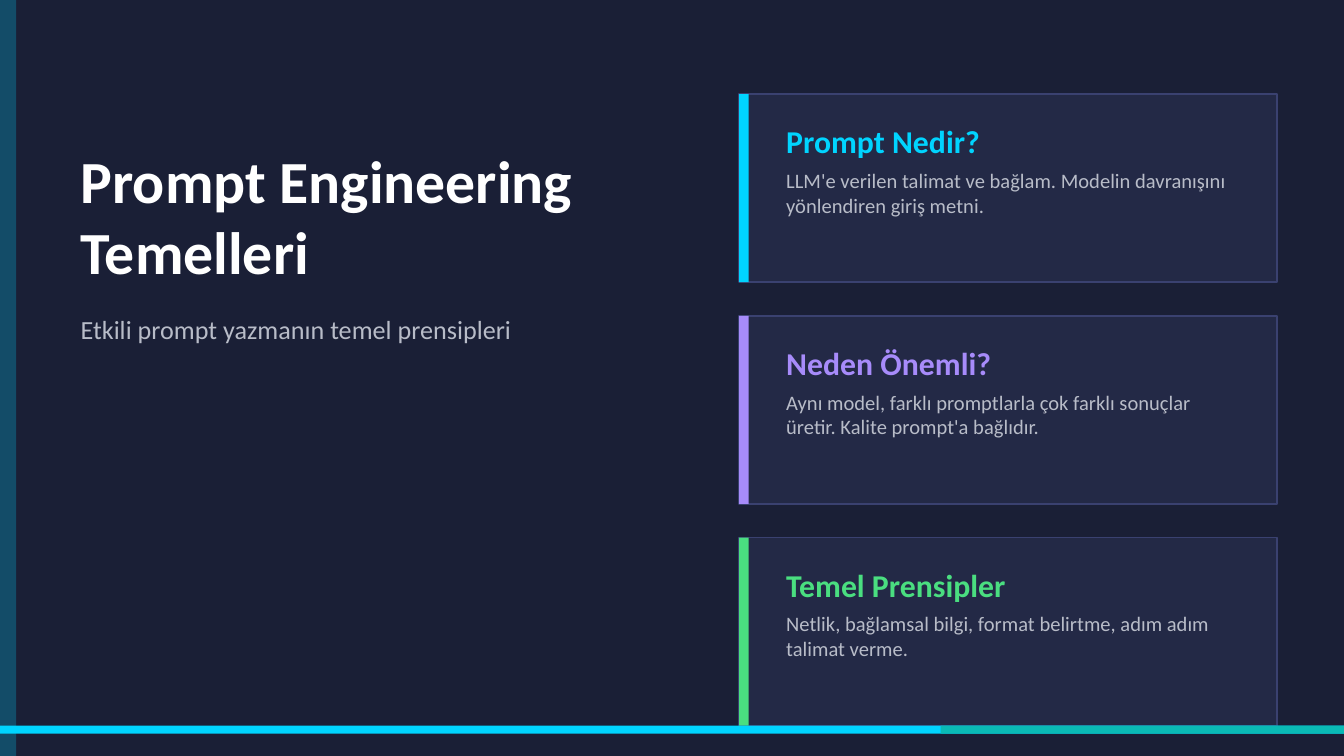
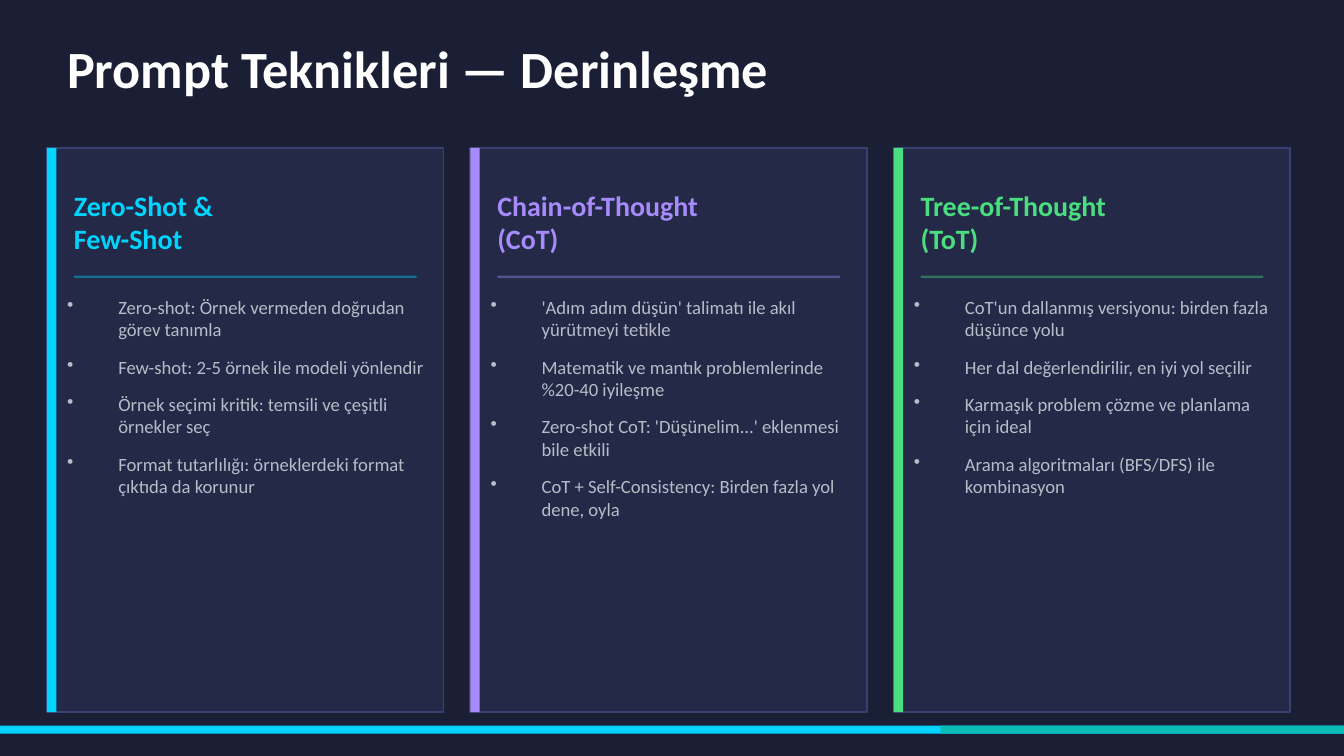
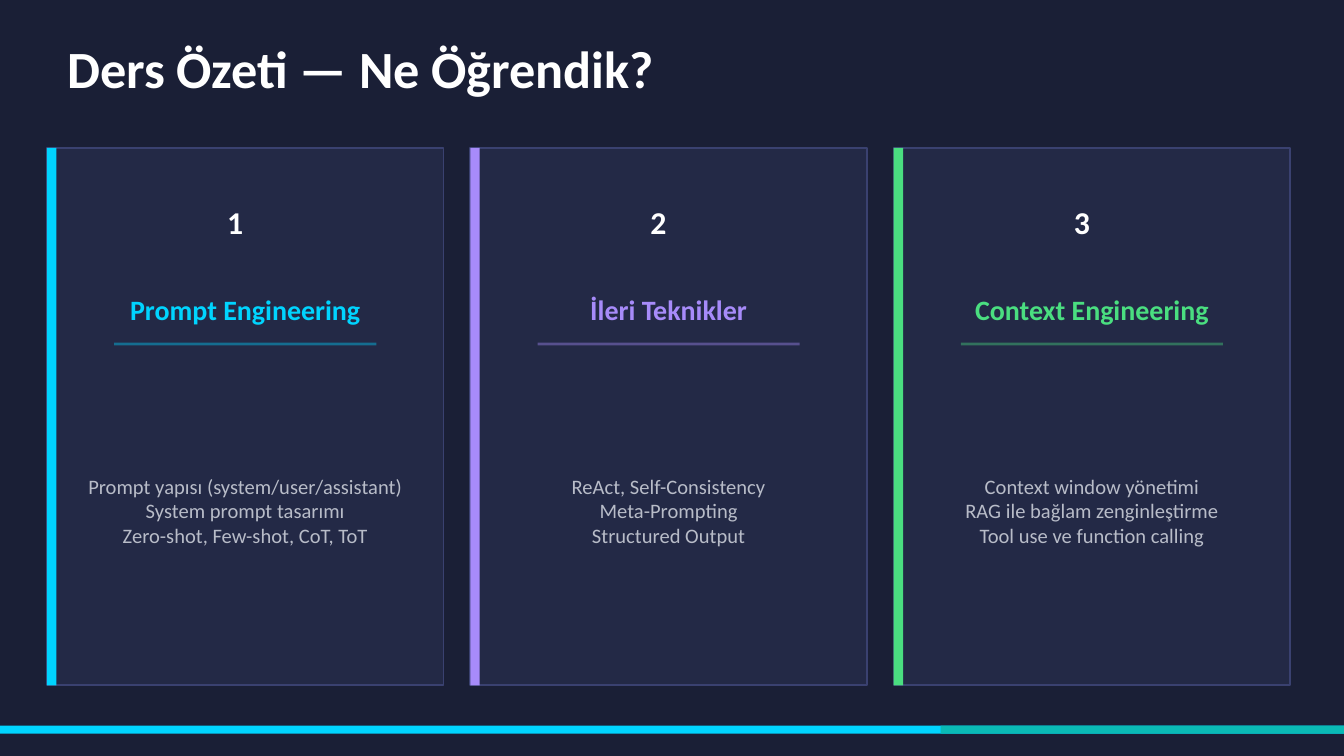
"""Build three dark slides on prompt engineering with accented cards."""
from lxml import etree
from pptx import Presentation
from pptx.dml.color import RGBColor
from pptx.enum.shapes import MSO_SHAPE
from pptx.enum.text import MSO_ANCHOR, PP_ALIGN
from pptx.oxml.ns import qn
from pptx.util import Inches, Pt

RECTANGLE = MSO_SHAPE.RECTANGLE
TOP, MIDDLE = MSO_ANCHOR.TOP, MSO_ANCHOR.MIDDLE
LEFT, CENTER = PP_ALIGN.LEFT, PP_ALIGN.CENTER

NAVY = RGBColor(0x1A, 0x1F, 0x36)
PANEL = RGBColor(0x23, 0x29, 0x46)
BORDER = RGBColor(0x3A, 0x41, 0x70)
CYAN = RGBColor(0x00, 0xD4, 0xFF)
VIOLET = RGBColor(0xA7, 0x8B, 0xFA)
GREEN = RGBColor(0x4A, 0xDE, 0x80)
TEAL = RGBColor(0x0A, 0xBA, 0xB5)
WHITE = RGBColor(0xFF, 0xFF, 0xFF)
GREY = RGBColor(0xB8, 0xBC, 0xC8)
ACCENTS = [CYAN, VIOLET, GREEN]

FONT = "Calibri"
WIDTH = 10
HEIGHT = WIDTH * 9 / 16
ACCENT_WIDTH = 0.07
RULE_HEIGHT = 0.02
BULLET_INDENT = 0.38

ROW_LEFT, ROW_TOP, ROW_WIDTH, ROW_HEIGHT, ROW_GAP = 5.5, 0.7, 4, 1.4, 0.25
COLUMN_LEFT, COLUMN_TOP, COLUMN_WIDTH, COLUMN_GAP = 0.35, 1.1, 2.95, 0.2
COLUMN_PADDING = 0.2
INNER_WIDTH = COLUMN_WIDTH - 2 * COLUMN_PADDING
row_tops = [ROW_TOP + index * (ROW_HEIGHT + ROW_GAP) for index in range(3)]
column_lefts = [COLUMN_LEFT + index * (COLUMN_WIDTH + COLUMN_GAP) for index in range(3)]


def add_rectangle(slide, left, top, width, height, color, alpha=None, border=None):
    """Add a flat rectangle, with alpha as a percentage."""
    shape = slide.shapes.add_shape(
        RECTANGLE, Inches(left), Inches(top), Inches(width), Inches(height))
    shape.shadow.inherit = False
    shape.fill.solid()
    shape.fill.fore_color.rgb = color
    if alpha:
        color_element = shape.fill._xPr.find(".//" + qn("a:srgbClr"))
        etree.SubElement(color_element, qn("a:alpha"), val=str(alpha * 1000))
    if border:
        shape.line.color.rgb = border
        shape.line.width = Pt(1)
    else:
        shape.line.fill.background()


def add_text(slide, left, top, width, height, lines, size, color,
             bold=False, anchor=MIDDLE, alignment=LEFT, bulleted=False):
    """Add a text box without margins, one paragraph per line."""
    shape = slide.shapes.add_textbox(
        Inches(left), Inches(top), Inches(width), Inches(height))
    frame = shape.text_frame
    frame.word_wrap = True
    frame.vertical_anchor = anchor
    frame.margin_left = frame.margin_top = frame.margin_right = frame.margin_bottom = 0
    for index, line in enumerate(lines):
        paragraph = frame.add_paragraph() if index else frame.paragraphs[0]
        paragraph.alignment = alignment
        if bulleted:
            paragraph.space_after = Pt(8)
            properties = paragraph._p.get_or_add_pPr()
            properties.set("marL", str(Inches(BULLET_INDENT)))
            properties.set("indent", str(-Inches(BULLET_INDENT)))
            etree.SubElement(properties, qn("a:buChar"), char="•")
        run = paragraph.add_run()
        run.text = line
        run.font.name = FONT
        run.font.size = Pt(size)
        run.font.bold = bold
        run.font.color.rgb = color


presentation = Presentation()
presentation.slide_width = Inches(WIDTH)
presentation.slide_height = Inches(HEIGHT)
blank_layout = presentation.slide_layouts[6]
basics, techniques, summary = [presentation.slides.add_slide(blank_layout) for _ in range(3)]

for slide in presentation.slides:
    slide.background.fill.solid()
    slide.background.fill.fore_color.rgb = NAVY

add_rectangle(basics, 0, 0, 0.12, HEIGHT, CYAN, alpha=25)
add_text(basics, 0.6, 1, 4.5, 1.2, ["Prompt Engineering", "Temelleri"], 32, WHITE, bold=True)
add_text(basics, 0.6, 2.2, 4.5, 0.5, ["Etkili prompt yazmanın temel prensipleri"], 14, GREY)
for slide, title in [(techniques, "Prompt Teknikleri — Derinleşme"),
                     (summary, "Ders Özeti — Ne Öğrendik?")]:
    add_text(slide, 0.5, 0.2, 0.9 * WIDTH, 0.6, [title], 28, WHITE, bold=True)

cards = [(basics, ROW_LEFT, top, ROW_WIDTH, ROW_HEIGHT, accent)
         for top, accent in zip(row_tops, ACCENTS)]
for slide, height in [(techniques, 4.2), (summary, 4)]:
    cards += [(slide, left, COLUMN_TOP, COLUMN_WIDTH, height, accent)
              for left, accent in zip(column_lefts, ACCENTS)]
for slide, left, top, width, height, accent in cards:
    add_rectangle(slide, left, top, width, height, PANEL, border=BORDER)
    add_rectangle(slide, left, top, ACCENT_WIDTH, height, accent)

basics_cards = [
    ("Prompt Nedir?",
     "LLM'e verilen talimat ve bağlam. Modelin davranışını yönlendiren giriş metni."),
    ("Neden Önemli?",
     "Aynı model, farklı promptlarla çok farklı sonuçlar üretir. Kalite prompt'a bağlıdır."),
    ("Temel Prensipler",
     "Netlik, bağlamsal bilgi, format belirtme, adım adım talimat verme."),
]
for top, accent, (heading, body) in zip(row_tops, ACCENTS, basics_cards):
    text_left = ROW_LEFT + 0.35
    add_text(basics, text_left, top + 0.15, 3.4, 0.4, [heading], 17, accent, bold=True)
    add_text(basics, text_left, top + 0.55, 3.4, 0.7, [body], 11, GREY, anchor=TOP)

technique_cards = [
    (["Zero-Shot &", "Few-Shot"],
     ["Zero-shot: Örnek vermeden doğrudan görev tanımla",
      "Few-shot: 2-5 örnek ile modeli yönlendir",
      "Örnek seçimi kritik: temsili ve çeşitli örnekler seç",
      "Format tutarlılığı: örneklerdeki format çıktıda da korunur"]),
    (["Chain-of-Thought", "(CoT)"],
     ["'Adım adım düşün' talimatı ile akıl yürütmeyi tetikle",
      "Matematik ve mantık problemlerinde %20-40 iyileşme",
      "Zero-shot CoT: 'Düşünelim...' eklenmesi bile etkili",
      "CoT + Self-Consistency: Birden fazla yol dene, oyla"]),
    (["Tree-of-Thought", "(ToT)"],
     ["CoT'un dallanmış versiyonu: birden fazla düşünce yolu",
      "Her dal değerlendirilir, en iyi yol seçilir",
      "Karmaşık problem çözme ve planlama için ideal",
      "Arama algoritmaları (BFS/DFS) ile kombinasyon"]),
]
for left, accent, (heading, points) in zip(column_lefts, ACCENTS, technique_cards):
    inner_left = left + COLUMN_PADDING
    add_text(techniques, inner_left, 1.3, INNER_WIDTH, 0.7, heading, 15, accent, bold=True)
    add_rectangle(techniques, inner_left, 2.05, INNER_WIDTH, RULE_HEIGHT, accent, alpha=40)
    add_text(techniques, left + 0.15, 2.2, INNER_WIDTH + 0.1, 2.9, points, 10, GREY,
             anchor=TOP, bulleted=True)

summary_cards = [
    ("Prompt Engineering",
     ["Prompt yapısı (system/user/assistant)", "System prompt tasarımı",
      "Zero-shot, Few-shot, CoT, ToT"]),
    ("İleri Teknikler",
     ["ReAct, Self-Consistency", "Meta-Prompting", "Structured Output"]),
    ("Context Engineering",
     ["Context window yönetimi", "RAG ile bağlam zenginleştirme",
      "Tool use ve function calling"]),
]
for number, (left, accent, (heading, topics)) in enumerate(
        zip(column_lefts, ACCENTS, summary_cards), start=1):
    inner_left = left + COLUMN_PADDING
    add_text(summary, left + 1.15, 1.4, 0.5, 0.5, [str(number)], 17, WHITE,
             bold=True, alignment=CENTER)
    add_text(summary, inner_left, 2.1, INNER_WIDTH, 0.4, [heading], 15, accent,
             bold=True, alignment=CENTER)
    add_rectangle(summary, left + 0.5, 2.55, COLUMN_WIDTH - 1, RULE_HEIGHT, accent, alpha=40)
    add_text(summary, inner_left, 2.7, INNER_WIDTH, 2.2, topics, 11, GREY, alignment=CENTER)

for slide in presentation.slides:
    add_rectangle(slide, 0, 5.4, WIDTH, 0.06, CYAN)
    add_rectangle(slide, 0.7 * WIDTH, 5.4, 0.3 * WIDTH, 0.06, TEAL)

presentation.save("out.pptx")
